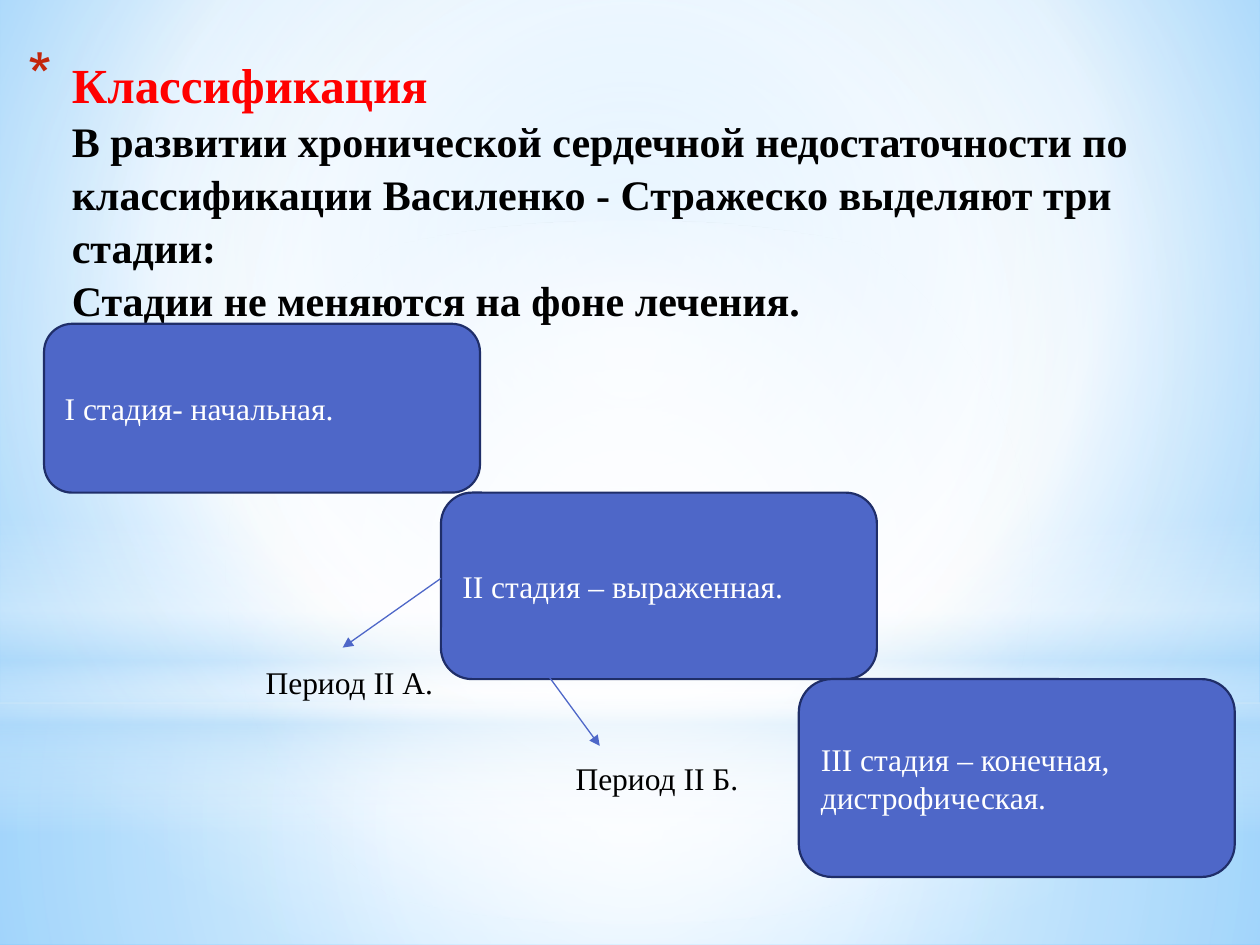
from lxml.etree import SubElement
from pptx import Presentation
from pptx.dml.color import RGBColor
from pptx.enum.shapes import MSO_CONNECTOR, MSO_SHAPE
from pptx.enum.text import MSO_ANCHOR, MSO_AUTO_SIZE, PP_ALIGN
from pptx.oxml import parse_xml
from pptx.oxml.ns import nsdecls, qn
from pptx.util import Pt

FONT = "Times New Roman"
COLORS = {
    "white": "FFFFFF", "black": "000000", "red": "FF0000", "bullet": "C3260C",
    "box": "4E67C8", "edge": "1F2E69", "haze": "B4DCFA",
    "sky": "9ED5FF", "deep": "5BB9FF",
}


def color(name):
    return RGBColor.from_string(COLORS[name])


def paint_gradient(solid, stops, center=None):
    stop_xml = "".join(
        f'<a:gs pos="{place * 1000}"><a:srgbClr val="{COLORS[name]}">'
        f'<a:alpha val="{alpha * 1000}"/></a:srgbClr></a:gs>'
        for place, name, alpha in stops)
    if center:
        sides = " ".join(f'{side}="{value * 1000}"' for side, value in zip("ltrb", center))
        direction = f'<a:path path="circle"><a:fillToRect {sides}/></a:path>'
    else:
        direction = '<a:lin ang="5400000" scaled="0"/>'
    gradient = parse_xml(f'<a:gradFill {nsdecls("a")} rotWithShape="1">'
                         f'<a:gsLst>{stop_xml}</a:gsLst>{direction}</a:gradFill>')
    solid.getparent().replace(solid, gradient)


deck = Presentation()
deck.slide_width, deck.slide_height = Pt(720), Pt(540)
page = deck.slides.add_slide(deck.slide_layouts[5])
title = page.shapes.title

page.background.fill.solid()
paint_gradient(page.element.xpath(".//p:bgPr/a:solidFill")[0],
               [(0, "sky", 100), (60, "white", 100), (100, "deep", 100)],
               (20, 10, 20, 60))

middle = (50, 50, 50, 50)
layers = [
    (MSO_SHAPE.RECTANGLE, 401.76, 138.24, middle,
     [(0, "white", 91), (37, "white", 76), (100, "haze", 79)]),
    (MSO_SHAPE.RECTANGLE, 0, 401.76, middle,
     [(0, "white", 89), (48, "white", 62), (100, "haze", 79)]),
    (MSO_SHAPE.RECTANGLE, 296.64, 180, None,
     [(0, "white", 0), (29, "white", 30), (45, "haze", 40),
      (55, "white", 26), (65, "haze", 60), (100, "white", 0)]),
    (MSO_SHAPE.OVAL, 126, 401.76, middle, [(0, "white", 100), (56, "white", 0)]),
]
for kind, top, height, center, stops in layers:
    layer = page.shapes.add_shape(kind, 0, Pt(top), Pt(720), Pt(height))
    layer.shadow.inherit = False
    layer.line.fill.background()
    layer.fill.solid()
    paint_gradient(layer.element.xpath("./p:spPr/a:solidFill")[0], stops, center)
    title.element.addprevious(layer.element)

title.left, title.top, title.width, title.height = Pt(8.64), Pt(25.92), Pt(697.68), Pt(84.24)
frame = title.text_frame
frame.word_wrap = True
frame.auto_size = MSO_AUTO_SIZE.NONE
frame.vertical_anchor = MSO_ANCHOR.TOP
para = frame.paragraphs[0]
para.alignment = PP_ALIGN.LEFT
para.line_spacing = 1.05
properties = para._p.get_or_add_pPr()
properties.set("marL", str(Pt(25.2)))
properties.set("indent", str(-Pt(25.2)))
bullet_color = SubElement(properties, qn("a:buClr"))
SubElement(bullet_color, qn("a:srgbClr")).set("val", COLORS["bullet"])
SubElement(properties, qn("a:buSzPct")).set("val", "128000")
SubElement(properties, qn("a:buChar")).set("char", "*")
para.font.name = FONT
para.font.bold = True
lines = [
    ("Классификация", 28, "red"),
    ("В развитии хронической сердечной недостаточности по классификации "
     "Василенко - Стражеско выделяют три стадии: ", 24, "black"),
    ("Стадии не меняются на фоне лечения.", 24, "black"),
]
for number, (text, size, name) in enumerate(lines):
    if number:
        para.add_line_break()
    span = para.add_run()
    span.text = text
    span.font.name = FONT
    span.font.bold = True
    span.font.size = Pt(size)
    span.font.color.rgb = color(name)

stages = [
    ("I стадия- начальная.", 25.2, 96.48),
    ("II стадия – выраженная.", 252, 106.56),
    ("III стадия – конечная, дистрофическая.", 456.48, 113.04),
]
top = 185.04
for text, left, height in stages:
    box = page.shapes.add_shape(MSO_SHAPE.ROUNDED_RECTANGLE,
                                Pt(left), Pt(top), Pt(249.12), Pt(height))
    box.shadow.inherit = False
    box.fill.solid()
    box.fill.fore_color.rgb = color("box")
    box.line.color.rgb = color("edge")
    box.line.width = Pt(1.25)
    box.text_frame.vertical_anchor = MSO_ANCHOR.MIDDLE
    para = box.text_frame.paragraphs[0]
    para.text = text
    para.alignment = PP_ALIGN.LEFT
    para.font.name = FONT
    para.font.size = Pt(18)
    para.font.color.rgb = color("white")
    top += height

arrows = [(252, 330.48, 195.84, 370.08), (303.12, 372.24, 342.72, 426.24)]
for ends in arrows:
    arrow = page.shapes.add_connector(MSO_CONNECTOR.STRAIGHT, *map(Pt, ends))
    arrow.line.color.rgb = color("box")
    arrow.line.width = Pt(0.75)
    SubElement(arrow.line._get_or_add_ln(), qn("a:tailEnd")).set("type", "triangle")
    SubElement(arrow.element.spPr, qn("a:effectLst"))

periods = [
    ("Период II Б.", 321.84, 408.24, 112.32, 72.72, True),
    ("Период II А.", 144.72, 375.12, 110.88, 28.8, False),
]
for text, left, top, width, height, wrap in periods:
    label = page.shapes.add_textbox(Pt(left), Pt(top), Pt(width), Pt(height))
    label.text_frame.word_wrap = wrap
    label.text_frame.vertical_anchor = MSO_ANCHOR.MIDDLE
    para = label.text_frame.paragraphs[0]
    para.text = text
    para.font.name = FONT
    para.font.size = Pt(18)
    para.font.color.rgb = color("black")

deck.save("out.pptx")
